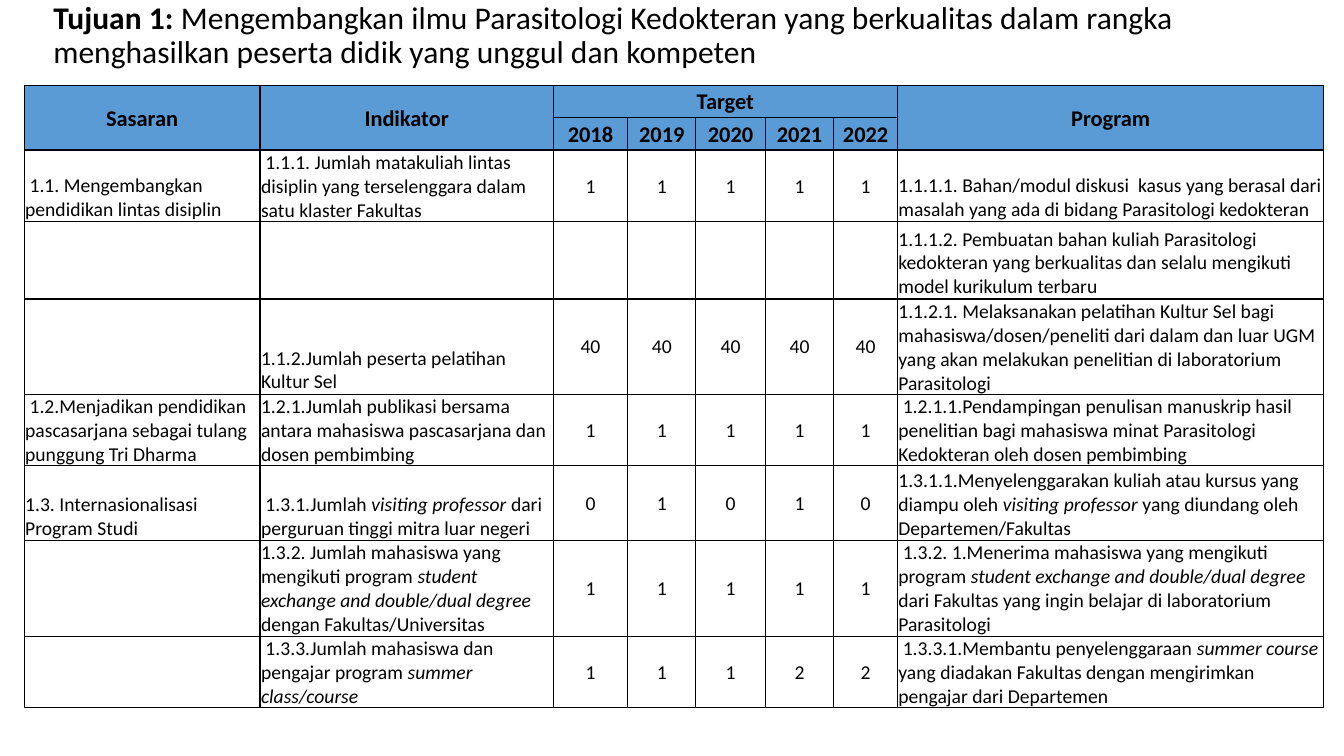
from lxml.etree import SubElement
from pptx import Presentation
from pptx.dml.color import RGBColor
from pptx.enum.text import MSO_ANCHOR, PP_ALIGN
from pptx.oxml.ns import qn
from pptx.util import Pt

# Content: *...* marks italic text
TITLE = [
    ("Tujuan 1: ", True),
    ("Mengembangkan ilmu Parasitologi Kedokteran yang berkualitas dalam "
     "rangka menghasilkan peserta didik yang unggul dan kompeten", False),
]
HEADERS = {0: "Sasaran", 1: "Indikator", 2: "Target", 7: "Program"}
YEARS = [2018, 2019, 2020, 2021, 2022]
# Goal, indicator, yearly targets, program
ROWS = [
    (" 1.1. Mengembangkan pendidikan lintas disiplin",
     " 1.1.1. Jumlah matakuliah lintas disiplin yang terselenggara dalam satu klaster Fakultas",
     [1, 1, 1, 1, 1],
     "1.1.1.1. Bahan/modul diskusi  kasus yang berasal dari masalah yang ada "
     "di bidang Parasitologi kedokteran"),
    ("", "", [""] * 5,
     "1.1.1.2. Pembuatan bahan kuliah Parasitologi kedokteran yang berkualitas "
     "dan selalu mengikuti model kurikulum terbaru"),
    ("", "1.1.2.Jumlah peserta pelatihan Kultur Sel",
     [40, 40, 40, 40, 40],
     "1.1.2.1. Melaksanakan pelatihan Kultur Sel bagi mahasiswa/dosen/peneliti dari dalam "
     "dan luar UGM yang akan melakukan penelitian di laboratorium Parasitologi"),
    (" 1.2.Menjadikan pendidikan pascasarjana sebagai tulang punggung Tri Dharma",
     "1.2.1.Jumlah publikasi bersama antara mahasiswa pascasarjana dan dosen pembimbing",
     [1, 1, 1, 1, 1],
     " 1.2.1.1.Pendampingan penulisan manuskrip hasil penelitian bagi mahasiswa "
     "minat Parasitologi Kedokteran oleh dosen pembimbing"),
    ("1.3. Internasionalisasi Program Studi",
     " 1.3.1.Jumlah *visiting professor *dari perguruan tinggi mitra luar negeri",
     [0, 1, 0, 1, 0],
     "1.3.1.1.Menyelenggarakan kuliah atau kursus yang diampu oleh *visiting professor* "
     "yang diundang oleh Departemen/Fakultas"),
    ("", "1.3.2. Jumlah mahasiswa yang mengikuti program "
     "*student exchange and double/dual degree *dengan Fakultas/Universitas",
     [1, 1, 1, 1, 1],
     " 1.3.2. 1.Menerima mahasiswa yang mengikuti program *student exchange and "
     "double/dual degree *dari Fakultas yang ingin belajar di laboratorium Parasitologi"),
    ("", " 1.3.3.Jumlah mahasiswa dan pengajar program *summer class/course*",
     [1, 1, 1, 2, 2],
     " 1.3.3.1.Membantu penyelenggaraan *summer course* yang diadakan Fakultas "
     "dengan mengirimkan pengajar dari Departemen"),
]
COLUMN_WIDTHS = [168.5, 209.4, 53.2, 48.7, 49.6, 49, 45.4, 304.6]
ROW_HEIGHTS = [23, 23, 50.4, 55.3, 67, 50.4, 53.3, 68.4, 50.4]
BLACK, BLUE = "000000", "5B9BD5"


def color(hex_value):
    return RGBColor.from_string(hex_value)


def add_text(paragraph, text, size=14, bold=False, align=PP_ALIGN.LEFT):
    paragraph.alignment = align
    for index, part in enumerate(text.split("*")):
        if part:
            run = paragraph.add_run()
            run.text = part
            run.font.name = "Calibri"
            run.font.size = Pt(size)
            run.font.bold = bold
            run.font.italic = index % 2 == 1
            run.font.color.rgb = color(BLACK)


def add_borders(cell):
    properties = cell._tc.get_or_add_tcPr()
    for side in ("lnL", "lnR", "lnT", "lnB"):
        line = SubElement(properties, qn(f"a:{side}"), w=str(Pt(1)))
        SubElement(SubElement(line, qn("a:solidFill")), qn("a:srgbClr"), val=BLACK)


def fill_cell(cell, text, anchor=MSO_ANCHOR.MIDDLE, **text_format):
    cell.vertical_anchor = anchor
    cell.margin_left = cell.margin_right = cell.margin_top = Pt(0.7)
    cell.margin_bottom = Pt(0)
    add_text(cell.text_frame.paragraphs[0], str(text), **text_format)


def add_title(slide):
    frame = slide.shapes.add_textbox(Pt(31), Pt(-0.7), Pt(814.3), Pt(53.3)).text_frame
    frame.word_wrap = True
    frame.vertical_anchor = MSO_ANCHOR.MIDDLE
    paragraph = frame.paragraphs[0]
    paragraph.line_spacing = 0.9
    for text, bold in TITLE:
        add_text(paragraph, text, size=22.5, bold=bold)


def add_target_table(slide):
    table = slide.shapes.add_table(
        len(ROW_HEIGHTS), len(COLUMN_WIDTHS), Pt(17.3), Pt(61.2),
        Pt(sum(COLUMN_WIDTHS)), Pt(sum(ROW_HEIGHTS))).table
    for column, width in zip(table.columns, COLUMN_WIDTHS):
        column.width = Pt(width)
    for row, height in zip(table.rows, ROW_HEIGHTS):
        row.height = Pt(height)

    # Borders and fills
    for row_index, row in enumerate(table.rows):
        for cell in row.cells:
            add_borders(cell)
            if row_index < 2:
                cell.fill.solid()
                cell.fill.fore_color.rgb = color(BLUE)
            else:
                cell.fill.background()

    # Two-level header
    header_format = dict(size=16, bold=True, align=PP_ALIGN.CENTER)
    for column, label in HEADERS.items():
        last_cell = table.cell(0, 6) if label == "Target" else table.cell(1, column)
        table.cell(0, column).merge(last_cell)
        fill_cell(table.cell(0, column), label, **header_format)
    for column, year in enumerate(YEARS, 2):
        fill_cell(table.cell(1, column), year, **header_format)

    # Body
    for row_index, (goal, indicator, targets, program) in enumerate(ROWS, 2):
        for column, text in ((0, goal), (1, indicator), (7, program)):
            fill_cell(table.cell(row_index, column), text, MSO_ANCHOR.BOTTOM)
        for column, target in enumerate(targets, 2):
            fill_cell(table.cell(row_index, column), target, align=PP_ALIGN.CENTER)


def main():
    presentation = Presentation()
    presentation.slide_width, presentation.slide_height = Pt(960), Pt(540)
    slide = presentation.slides.add_slide(presentation.slide_layouts[6])
    add_title(slide)
    add_target_table(slide)
    presentation.save("out.pptx")


if __name__ == "__main__":
    main()
